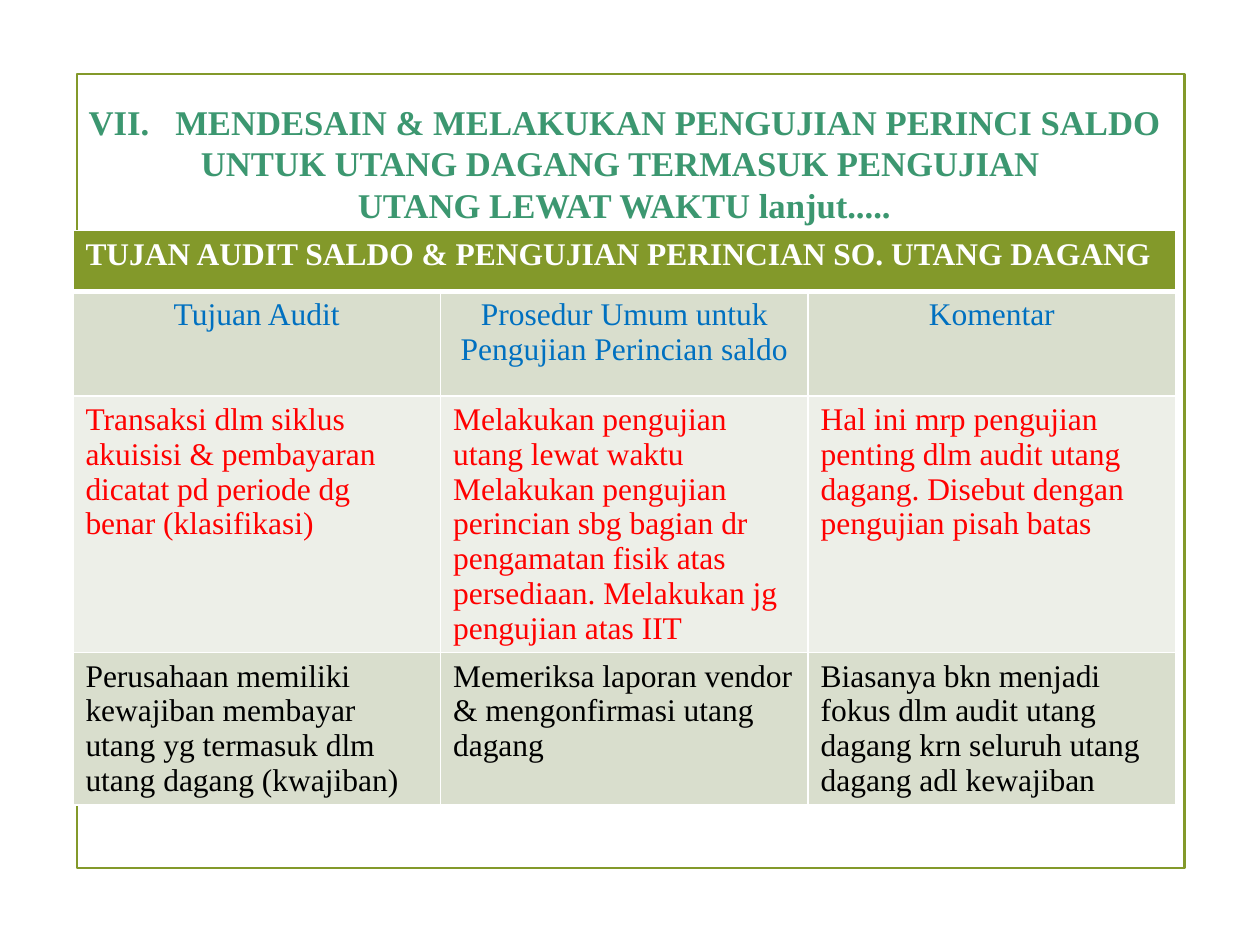
import pptx
import pptx.util
import pptx.dml.color
import pptx.enum.shapes
import pptx.enum.text
import pptx.oxml
import pptx.oxml.ns

Cm = pptx.util.Cm
RGBColor = pptx.dml.color.RGBColor
ALIGN = pptx.enum.text.PP_ALIGN

OLIVE = RGBColor(0x83, 0x99, 0x2A)
TEAL = RGBColor(0x3C, 0x97, 0x70)
BLUE = RGBColor(0x00, 0x70, 0xC0)
RED = RGBColor(0xFF, 0x00, 0x00)
BLACK = RGBColor(0x00, 0x00, 0x00)
WHITE = RGBColor(0xFF, 0xFF, 0xFF)
SAGE = RGBColor(0xD9, 0xDE, 0xCD)
PALE = RGBColor(0xED, 0xEF, 0xE8)


def write_text(frame, text, size=18, color=BLACK, bold=False, align=ALIGN.LEFT):
    frame.text = text
    for para in frame.paragraphs:
        para.alignment = align
        para.line_spacing = 1.0
        for span in para.runs:
            span.font.name = "Times New Roman"
            span.font.size = pptx.util.Pt(size)
            span.font.bold = bold
            span.font.color.rgb = color


def add_borders(cell, widths):
    properties = cell._tc.get_or_add_tcPr()
    for side, width in widths.items():
        properties.append(pptx.oxml.parse_xml(
            f'<a:ln{side} {pptx.oxml.ns.nsdecls("a")} w="{pptx.util.Pt(width)}">'
            f'<a:solidFill><a:srgbClr val="{WHITE}"/></a:solidFill></a:ln{side}>'))


deck = pptx.Presentation()
deck.slide_width = Cm(25.4)
deck.slide_height = Cm(19.05)
page = deck.slides.add_slide(deck.slide_layouts[5])

title = page.shapes.title
title.left, title.top, title.width, title.height = Cm(1.47), Cm(1.9), Cm(22.23), Cm(2.34)
title.text_frame.word_wrap = True
title.text_frame.auto_size = pptx.enum.text.MSO_AUTO_SIZE.NONE
title.text_frame.vertical_anchor = pptx.enum.text.MSO_ANCHOR.TOP
write_text(
    title.text_frame,
    "VII.   MENDESAIN & MELAKUKAN PENGUJIAN PERINCI SALDO "
    "UNTUK UTANG DAGANG TERMASUK PENGUJIAN \vUTANG LEWAT WAKTU lanjut.....",
    size=19.8, color=TEAL, bold=True, align=ALIGN.CENTER)

border = page.shapes.add_shape(
    pptx.enum.shapes.MSO_SHAPE.RECTANGLE, Cm(1.55), Cm(1.5), Cm(22.33), Cm(16))
border.shadow.inherit = False
border.fill.background()
border.line.color.rgb = OLIVE
border.line.width = pptx.util.Pt(1.25)

rows = [
    (1.22, OLIVE, dict(color=WHITE, bold=True),
     ["TUJAN AUDIT SALDO & PENGUJIAN PERINCIAN SO. UTANG DAGANG", "", ""]),
    (2.11, SAGE, dict(color=BLUE, align=ALIGN.CENTER),
     ["Tujuan Audit", "Prosedur Umum untuk Pengujian Perincian saldo", "Komentar"]),
    (3, PALE, dict(color=RED),
     ["Transaksi dlm siklus akuisisi & pembayaran dicatat pd periode dg benar (klasifikasi)",
      "Melakukan pengujian utang lewat waktu\n"
      "Melakukan pengujian perincian sbg bagian dr pengamatan fisik atas persediaan. "
      "Melakukan jg pengujian atas IIT",
      "Hal ini mrp pengujian penting dlm audit utang dagang. "
      "Disebut dengan pengujian pisah batas"]),
    (3, SAGE, dict(color=BLACK),
     ["Perusahaan memiliki kewajiban membayar utang yg termasuk dlm utang dagang (kwajiban)",
      "Memeriksa laporan vendor & mengonfirmasi utang dagang",
      "Biasanya bkn menjadi fokus dlm audit utang dagang krn seluruh utang dagang "
      "adl kewajiban"]),
]
table = page.shapes.add_table(
    len(rows), 3, Cm(1.47), Cm(4.65), Cm(22.23), Cm(sum(row[0] for row in rows))).table
for column in table.columns:
    column.width = Cm(7.41)
table.cell(0, 0).merge(table.cell(0, 2))

for row_index, (height, fill, text_format, texts) in enumerate(rows):
    table.rows[row_index].height = Cm(height)
    for column_index, text in enumerate(texts):
        cell = table.cell(row_index, column_index)
        add_borders(cell, dict(L=1, R=1, T=3 if row_index == 1 else 1, B=3 if row_index == 0 else 1))
        cell.fill.solid()
        cell.fill.fore_color.rgb = fill
        if text:
            write_text(cell.text_frame, text, **text_format)

deck.save("out.pptx")
